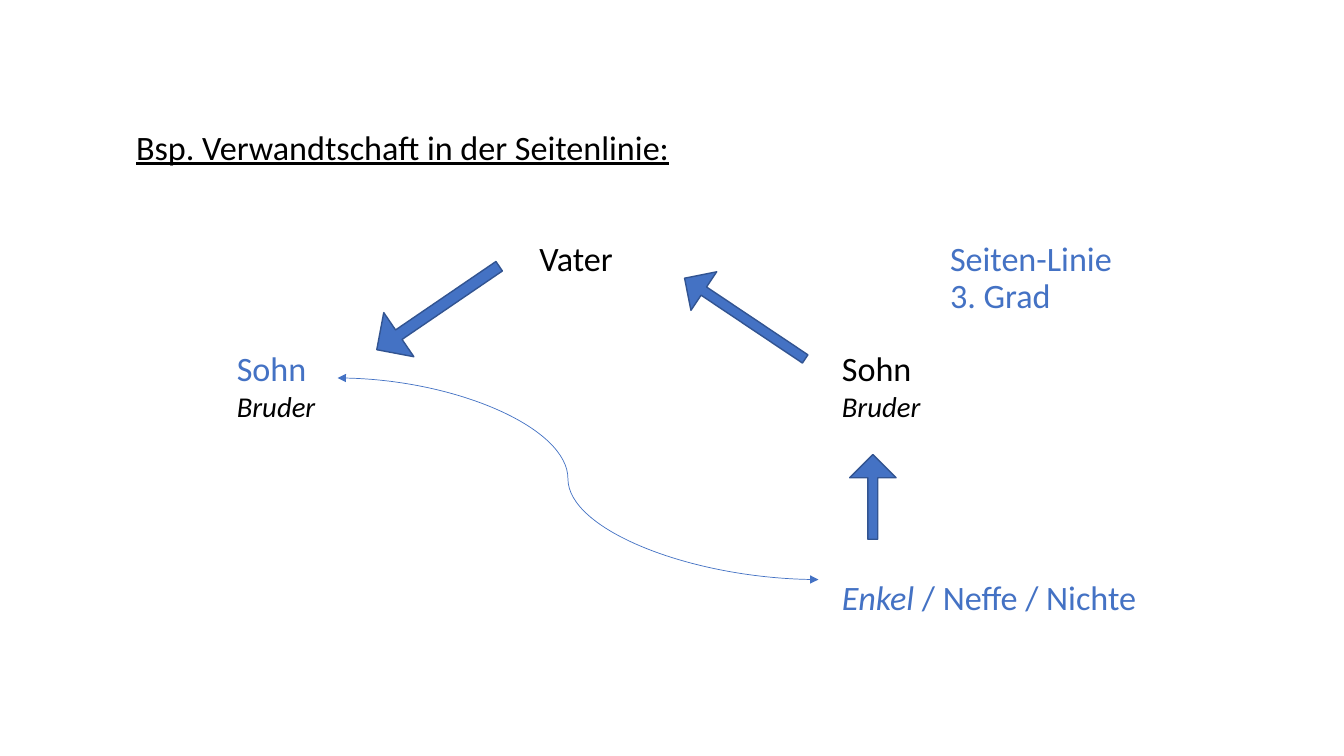
"""Builds a slide on kinship in the collateral line."""
import pptx
import pptx.dml.color
import pptx.enum.shapes
import pptx.enum.text
import pptx.util
from lxml import etree

Pt = pptx.util.Pt
BLUE, BLACK, OUTLINE = "4472C4", "000000", "325491"
LARGE, SMALL = 24.4, 20.5
LEFT_SON, RIGHT_SON = 169.2, 601.4

HEADING = {"text": "Bsp. Verwandtschaft in der Seitenlinie:", "color": BLACK, "underline": True}
FATHER = {"text": "Vater", "color": BLACK}
DEGREE = [{"text": "Seiten-Linie", "color": BLUE}, {"text": "3. Grad", "color": BLUE}]
BROTHER = {"text": "Bruder", "color": BLACK, "size": SMALL, "italic": True}
GRANDCHILD = [{"text": "Enkel", "color": BLUE, "italic": True},
              {"text": " / Neffe / Nichte", "color": BLUE}]

# left, first baseline, width, paragraphs made of runs
LABELS = [
    (97.2, 113.6, 420, [[HEADING]]),
    (385.3, 192.9, 100, [[FATHER]]),
    (678.6, 192.9, 180, [[line] for line in DEGREE]),
    (LEFT_SON, 271.6, 100, [[{"text": "Sohn", "color": BLUE}], [BROTHER]]),
    (RIGHT_SON, 271.6, 100, [[{"text": "Sohn", "color": BLACK}], [BROTHER]]),
    (RIGHT_SON, 435, 280, [GRANDCHILD]),
]

# left, top, width, height, rotation
ARROWS = [
    (293.76, 167.04, 38.16, 105.84, 235.7),
    (515.52, 175.68, 33.12, 103.68, 303.8),
    (606.96, 324.72, 33.12, 60.48, 0),
]
RELATION = (241.2, 270, 584.64, 414)


def rgb(color):
    return pptx.dml.color.RGBColor.from_string(color)


def add_run(paragraph, text, color, size=LARGE, italic=False, underline=False):
    run = paragraph.add_run()
    run.text = text
    font = run.font
    font.name, font.size = "Calibri", Pt(size)
    font.italic, font.underline = italic, underline
    font.color.rgb = rgb(color)


def add_label(slide, left, baseline, width, paragraphs):
    top = baseline - 0.83 * LARGE
    frame = slide.shapes.add_textbox(Pt(left), Pt(top), Pt(width), Pt(28 * len(paragraphs))).text_frame
    frame.word_wrap = True
    frame.vertical_anchor = pptx.enum.text.MSO_ANCHOR.TOP
    frame.margin_left = frame.margin_right = frame.margin_top = frame.margin_bottom = 0
    for index, runs in enumerate(paragraphs):
        paragraph = frame.add_paragraph() if index else frame.paragraphs[0]
        paragraph.line_spacing = 0.9
        if BROTHER in runs:
            paragraph.space_before = Pt(3)
        for run in runs:
            add_run(paragraph, **run)


def add_arrow(slide, left, top, width, height, rotation):
    arrow = slide.shapes.add_shape(pptx.enum.shapes.MSO_SHAPE.UP_ARROW,
                                   Pt(left), Pt(top), Pt(width), Pt(height))
    arrow.adjustments[0], arrow.adjustments[1] = 0.214, 0.5
    arrow.rotation = rotation
    arrow.shadow.inherit = False
    arrow.fill.solid()
    arrow.fill.fore_color.rgb = rgb(BLUE)
    arrow.line.color.rgb = rgb(OUTLINE)
    arrow.line.width = Pt(1)


def add_relation(slide, ends):
    relation = slide.shapes.add_connector(pptx.enum.shapes.MSO_CONNECTOR.CURVE, *map(Pt, ends))
    relation.line.color.rgb = rgb(BLUE)
    relation.line.width = Pt(0.5)
    properties = relation._element.spPr
    namespace = "{http://schemas.openxmlformats.org/drawingml/2006/main}"
    for end in ("headEnd", "tailEnd"):
        etree.SubElement(properties.find(namespace + "ln"), namespace + end, type="triangle")
    etree.SubElement(properties, namespace + "effectLst")
    bend = properties.find(namespace + "prstGeom").find(namespace + "avLst")
    etree.SubElement(bend, namespace + "gd", name="adj1", fmla="val 47900")


def main():
    presentation = pptx.Presentation()
    presentation.slide_width, presentation.slide_height = Pt(960), Pt(540)
    slide = presentation.slides.add_slide(presentation.slide_layouts[6])
    for label in LABELS:
        add_label(slide, *label)
    for arrow in ARROWS:
        add_arrow(slide, *arrow)
    add_relation(slide, RELATION)
    presentation.save("out.pptx")


if __name__ == "__main__":
    main()
